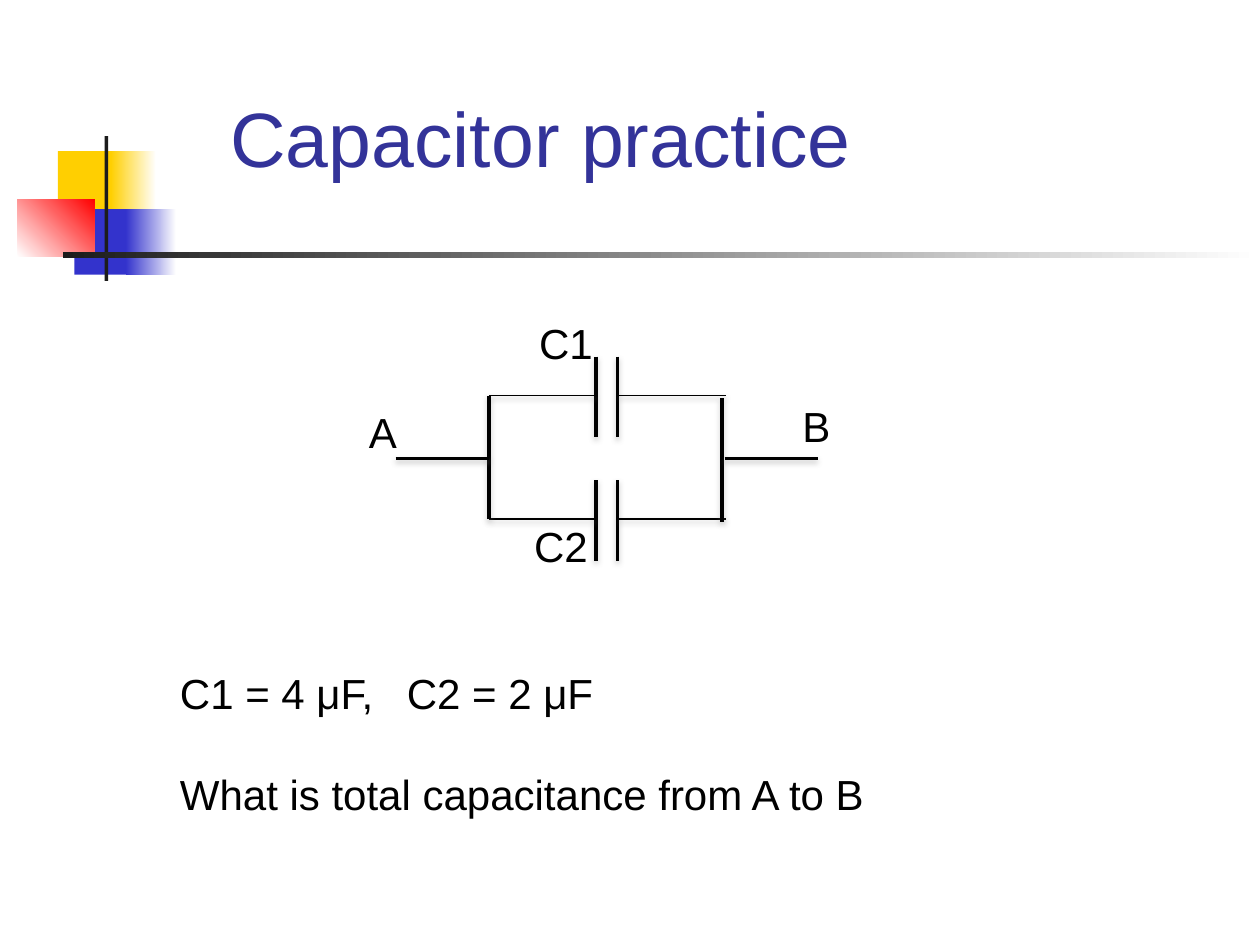
from lxml.etree import SubElement
from pptx import Presentation
from pptx.dml.color import RGBColor
from pptx.enum.shapes import MSO_CONNECTOR, MSO_SHAPE
from pptx.enum.text import MSO_ANCHOR
from pptx.oxml.ns import qn
from pptx.util import Inches, Pt

COLORS = {
    "white": "FFFFFF", "black": "000000", "ink": "1C1C1C", "title": "333399",
    "yellow": "FFCF01", "blue": "3333CC", "red": "FF0000", "shadow": "808080",
}


def rgb(name):
    """Return the named colour."""
    return RGBColor.from_string(COLORS[name])


def add_block(s, box, *colors, angle=0):
    """Add a borderless rectangle, solid for one colour and graded for two."""
    sp = s.shapes.add_shape(MSO_SHAPE.RECTANGLE, *map(Inches, box))
    sp.shadow.inherit = False
    sp.line.fill.background()
    if len(colors) == 1:
        sp.fill.solid()
        sp.fill.fore_color.rgb = rgb(colors[0])
        return
    sp.fill.gradient()
    sp.fill.gradient_angle = angle
    for stop, color, position in zip(sp.fill.gradient_stops, colors, (0, 1)):
        stop.color.rgb = rgb(color)
        stop.position = position


def add_text(s, box, *lines, size=24, color="black", anchor=MSO_ANCHOR.TOP,
             wrap=False, gap=0, tab=None):
    """Add a text box with one paragraph per line."""
    tf = s.shapes.add_textbox(*map(Inches, box)).text_frame
    tf.word_wrap = wrap
    tf.vertical_anchor = anchor
    for i, line in enumerate(lines):
        p = tf.add_paragraph() if i else tf.paragraphs[0]
        if i:
            p.space_before = Pt(gap)
        if tab and "\t" in line:
            tabs = SubElement(p._p.get_or_add_pPr(), qn("a:tabLst"))
            SubElement(tabs, qn("a:tab"), pos=str(Inches(tab)), algn="l")
        r = p.add_run()
        r.text = line
        r.font.name = "Arial"
        r.font.size = Pt(size)
        r.font.color.rgb = rgb(color)


def add_wire(s, x1, y1, x2, y2, width=2):
    """Add a black wire with a soft shadow below it."""
    c = s.shapes.add_connector(MSO_CONNECTOR.STRAIGHT,
                               *map(Inches, (x1, y1, x2, y2)))
    c.line.color.rgb = rgb("black")
    c.line.width = Pt(width)
    effects = SubElement(c._element.spPr, qn("a:effectLst"))
    shadow = SubElement(effects, qn("a:outerShdw"), blurRad=str(Pt(3.1)),
                        dist=str(Pt(1.6)), dir="5400000", rotWithShape="0")
    color = SubElement(shadow, qn("a:srgbClr"), val=COLORS["shadow"])
    SubElement(color, qn("a:alpha"), val="38000")


def add_capacitor(s, wire_y, plate_top):
    """Add a branch with two plates and a lead on each side."""
    for x in (4.73, 4.9):
        add_wire(s, x, plate_top, x, plate_top + 0.64)
    for x in (3.88, 4.91):
        add_wire(s, x, wire_y, x + 0.85, wire_y, width=1)


def add_ornament(s):
    """Add the coloured blocks and the two bars beside the title."""
    add_block(s, (0.46, 1.2, 0.48, 0.52), "yellow")
    add_block(s, (0.88, 1.2, 0.36, 0.52), "yellow", "white")
    add_block(s, (0.59, 1.66, 0.46, 0.52), "blue")
    add_block(s, (1, 1.66, 0.4, 0.52), "blue", "white")
    add_block(s, (0.14, 1.58, 0.61, 0.46), "white", "red", angle=45)
    add_block(s, (0.83, 1.08, 0.03, 1.15), "ink")
    add_block(s, (0.5, 2, 9.5, 0.05), "ink", "white")


def add_circuit(s):
    """Add two parallel capacitors between the terminals A and B."""
    add_capacitor(s, 3.14, 2.83)
    add_capacitor(s, 4.12, 3.81)
    for x, y in ((3.88, 3.14), (5.73, 3.16)):
        add_wire(s, x, y, x, y + 0.98)
    for x in (3.14, 5.75):
        add_wire(s, x, 3.64, x + 0.74, 3.64)
    add_text(s, (2.83, 3.18, 0.59, 0.53), "A")
    add_text(s, (6.27, 3.13, 0.58, 0.53), "B")
    add_text(s, (4.18, 2.47, 0.63, 0.5), "C1")
    add_text(s, (4.14, 4.08, 0.63, 0.5), "C2")


def main():
    """Build and save the slide."""
    prs = Presentation()
    prs.slide_width, prs.slide_height = Inches(10), Inches(7.5)
    s = prs.slides.add_slide(prs.slide_layouts[6])
    add_ornament(s)
    add_text(s, (1.73, 0.25, 8.52, 1.25), "Capacitor practice", size=44,
             color="title", anchor=MSO_ANCHOR.BOTTOM, wrap=True)
    add_circuit(s)
    add_text(s, (1.33, 5.25, 5.68, 1.31), "C1 = 4 μF,\tC2 = 2 μF",
             "What is total capacitance from A to B", gap=29, tab=1.8)
    prs.save("out.pptx")


if __name__ == "__main__":
    main()
